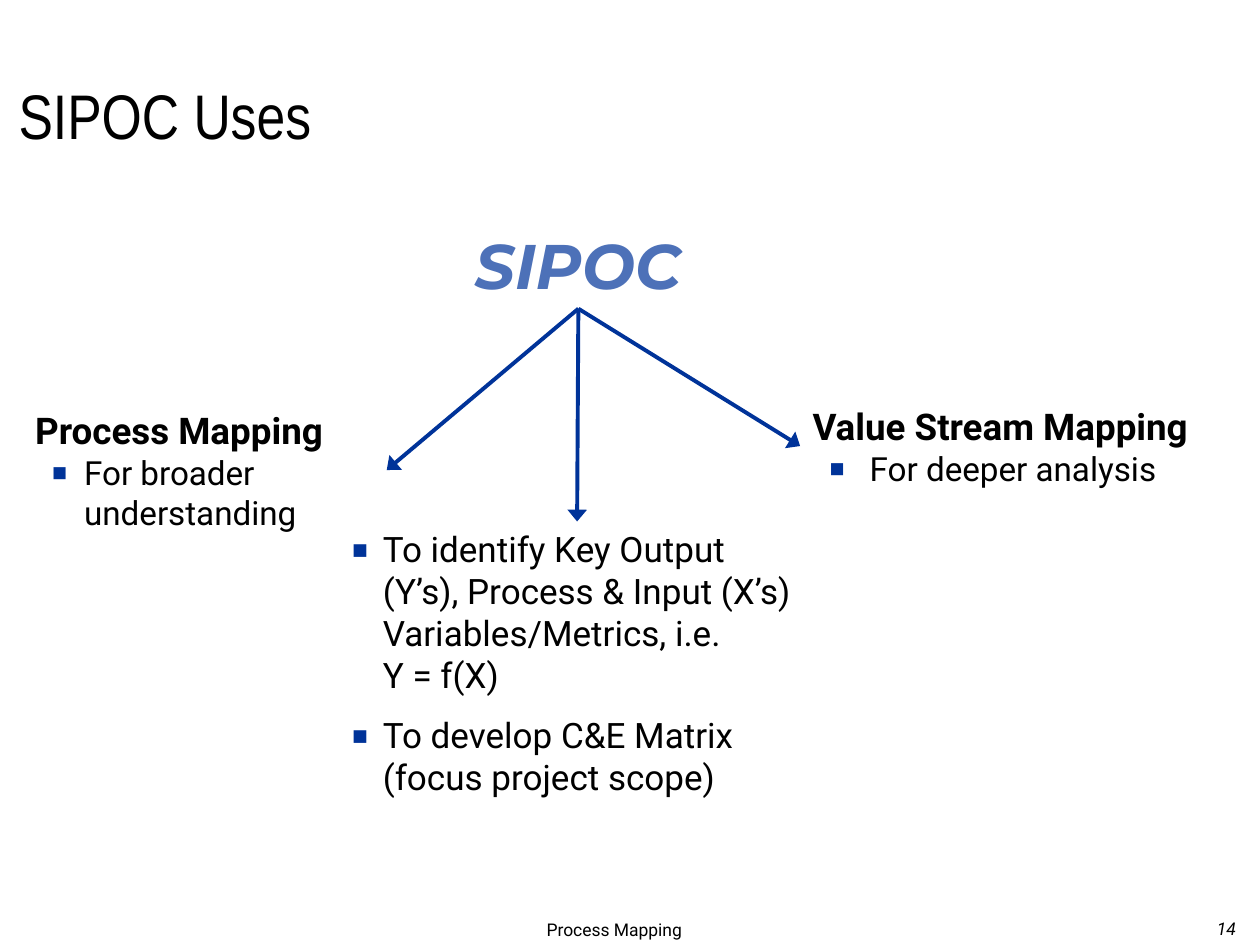
from lxml import etree
from pptx import Presentation
from pptx.dml.color import RGBColor
from pptx.enum.shapes import MSO_CONNECTOR
from pptx.enum.text import MSO_ANCHOR, MSO_AUTO_SIZE, PP_ALIGN
from pptx.oxml.ns import qn
from pptx.util import Pt

LEFT, CENTER = PP_ALIGN.LEFT, PP_ALIGN.CENTER
TOP, BOTTOM = MSO_ANCHOR.TOP, MSO_ANCHOR.BOTTOM
COLORS = {"text": "000000", "navy": "003399", "sipoc": "4D71B8"}
TITLE_ONLY = 5


def write(paragraph, text, size, font="Roboto", color="text", bold=False,
          italic=False, align=LEFT, bullet_indent=None):
    """Fill a paragraph; bullet_indent is (left margin, hanging) in points."""
    paragraph.text = text
    paragraph.alignment = align
    if bullet_indent:
        margin, hanging = bullet_indent
        props = paragraph._p.get_or_add_pPr()
        props.set("marL", str(Pt(margin)))
        props.set("indent", str(-Pt(hanging)))
        bullet_color = etree.SubElement(props, qn("a:buClr"))
        etree.SubElement(bullet_color, qn("a:srgbClr"), val=COLORS["navy"])
        etree.SubElement(props, qn("a:buSzPct"), val="125000")
        etree.SubElement(props, qn("a:buFont"), typeface="Roboto")
        etree.SubElement(props, qn("a:buChar"), char="▪")
    paragraph.font.name = font
    paragraph.font.size = Pt(size)
    paragraph.font.bold = bold
    paragraph.font.italic = italic
    paragraph.font.color.rgb = RGBColor.from_string(COLORS[color])


def add_frame(left, top, width, height, anchor=TOP):
    box = slide.shapes.add_textbox(Pt(left), Pt(top), Pt(width), Pt(height))
    box.text_frame.word_wrap = True
    box.text_frame.vertical_anchor = anchor
    return box.text_frame


prs = Presentation()
prs.slide_width, prs.slide_height = Pt(720), Pt(540)
slide = prs.slides.add_slide(prs.slide_layouts[TITLE_ONLY])

# Title
title = slide.shapes.title
title.left, title.top, title.width, title.height = Pt(3.4), Pt(1), Pt(598), Pt(90)
title.text_frame.vertical_anchor = BOTTOM
title.text_frame.auto_size = MSO_AUTO_SIZE.NONE
write(title.text_frame.paragraphs[0], "SIPOC Uses", 36, font="Arial Narrow")
title.text_frame.paragraphs[0].line_spacing = 0.9

# Footer and page number
footer = add_frame(102, 521.6, 498, 18.4)
write(footer.paragraphs[0], "Process Mapping", 10, align=CENTER)
page_number = add_frame(688.3, 522, 31.7, 18, anchor=BOTTOM)
write(page_number.paragraphs[0], "14", 10, italic=True)

# Source of the three arrows, without side insets so it stays on one line
sipoc = add_frame(268, 125.6, 124.6, 51)
sipoc.word_wrap = False
sipoc.margin_left = sipoc.margin_right = 0
write(sipoc.paragraphs[0], "SIPOC", 36, font="Montserrat", color="sipoc",
      bold=True, italic=True, align=CENTER)

# Central uses
uses = add_frame(193.7, 298, 271.4, 163.4)
write(uses.paragraphs[0],
      "To identify Key Output (Y’s), Process & Input (X’s) Variables/Metrics, i.e. \nY = f(X)",
      20, bullet_indent=(18, 18))
matrix_use = uses.add_paragraph()
write(matrix_use, "To develop C&E Matrix (focus project scope)", 20, bullet_indent=(18, 18))
matrix_use.space_before = Pt(10)

# Mapping methods on either side
for heading, purpose, place in [
    ("Value Stream Mapping", " For deeper analysis", (457.2, 227.2, 262.8, 55.4)),
    ("Process Mapping", "For broader understanding", (13, 229.5, 208, 77.8)),
]:
    method = add_frame(*place)
    write(method.paragraphs[0], heading, 21, bold=True)
    purpose_line = method.add_paragraph()
    purpose_line.level = 1
    write(purpose_line, purpose, 19, bullet_indent=(28, 18.7))

# Arrows from SIPOC to each use
for end_x, end_y in [(457.2, 254.9), (329.8, 298), (221, 268.6)]:
    arrow = slide.shapes.add_connector(
        MSO_CONNECTOR.STRAIGHT, Pt(330.5), Pt(176.4), Pt(end_x), Pt(end_y))
    arrow.line.color.rgb = RGBColor.from_string(COLORS["navy"])
    arrow.line.width = Pt(2.25)
    etree.SubElement(arrow.line._get_or_add_ln(), qn("a:tailEnd"),
                     type="triangle", w="lg", len="med")
    etree.SubElement(arrow._element.spPr, qn("a:effectLst"))

prs.save("out.pptx")
